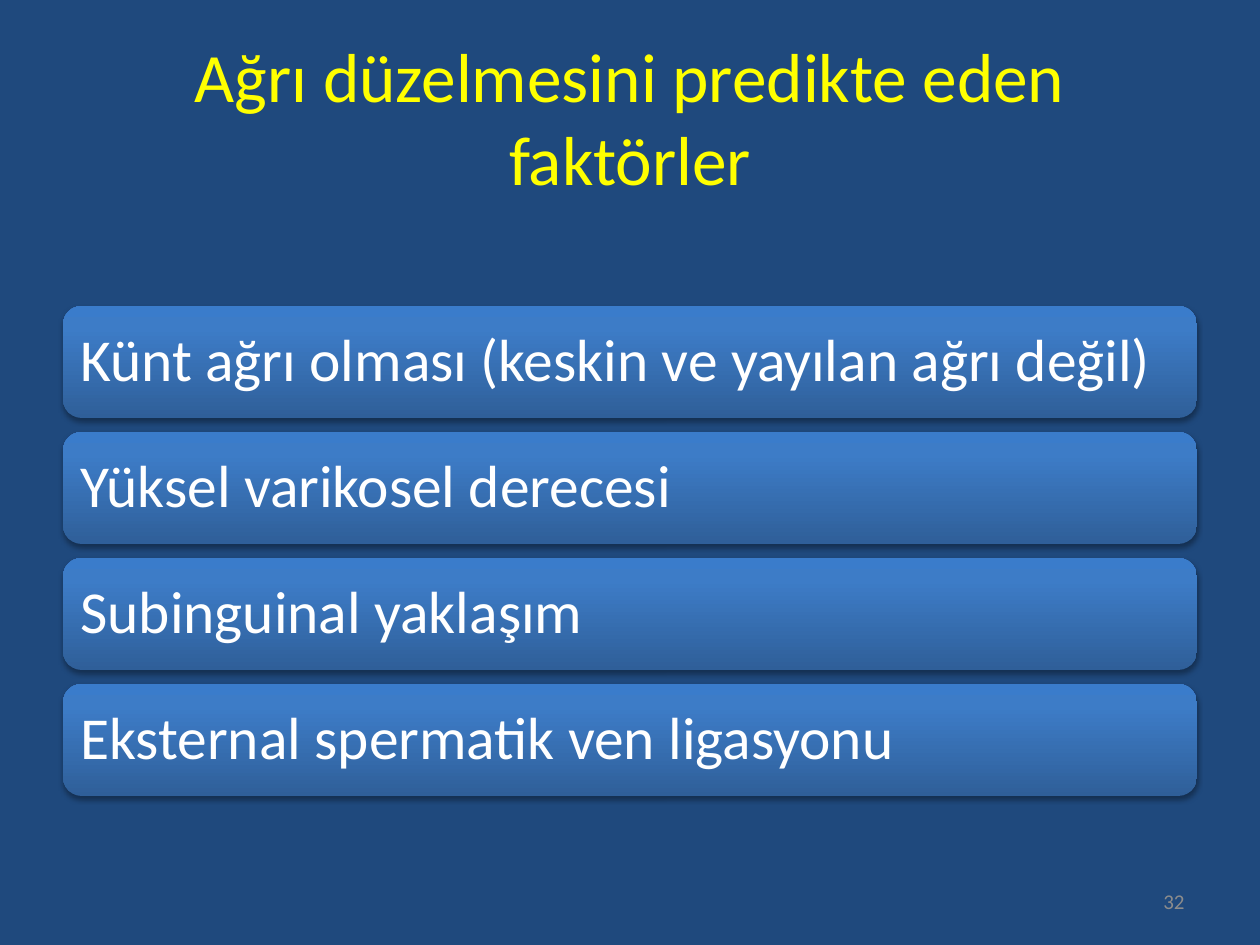
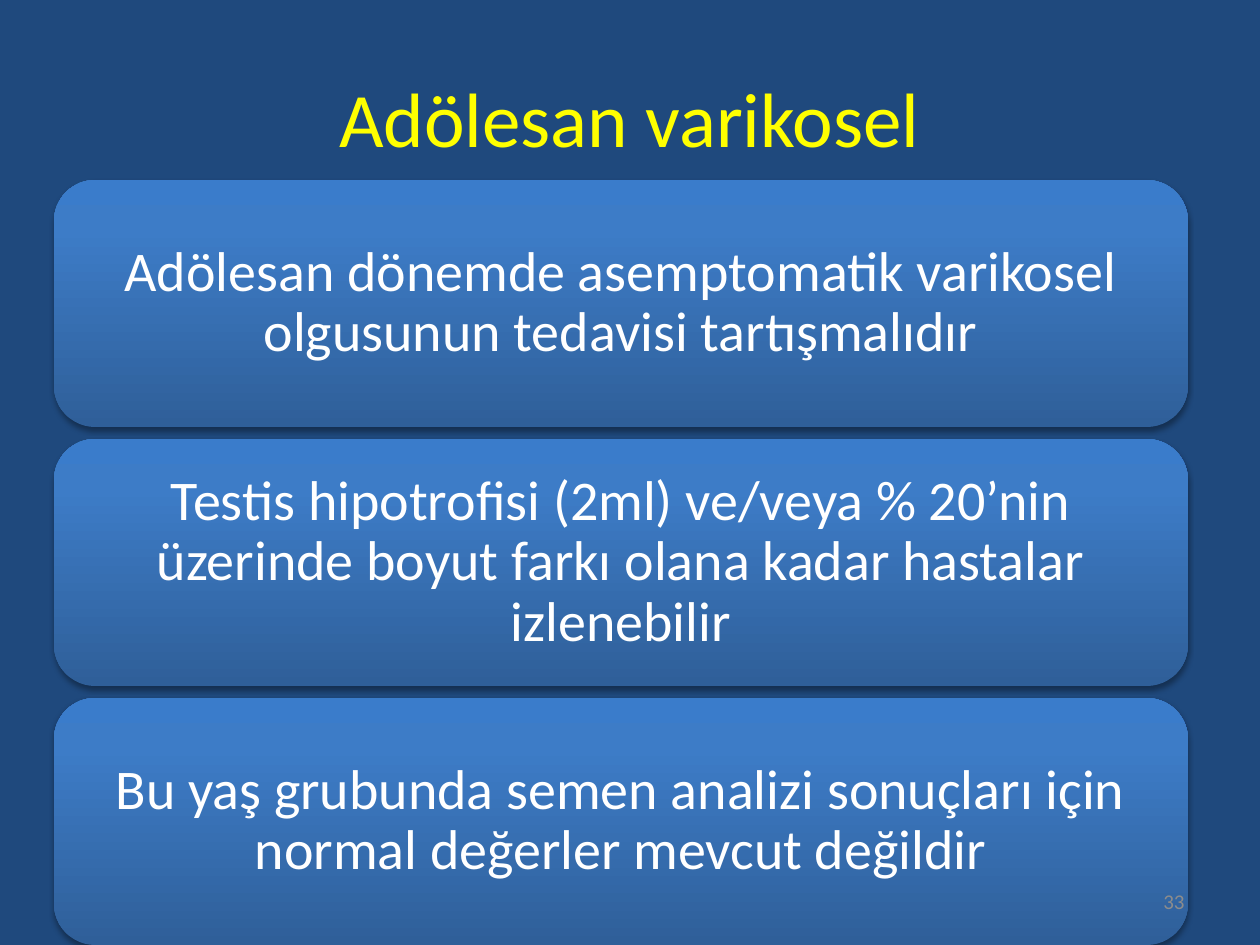
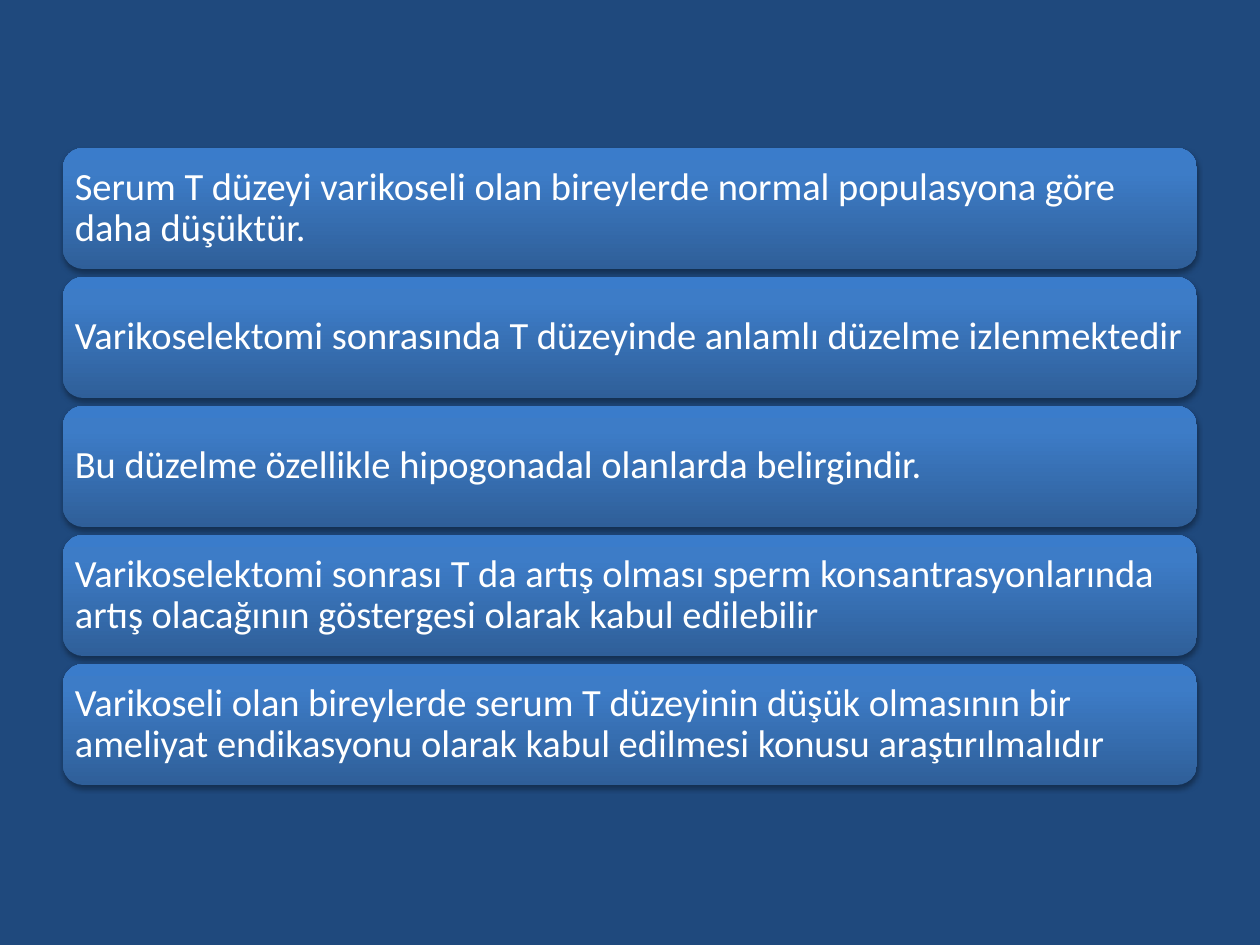
from pptx import Presentation
from pptx.dml.color import RGBColor
from pptx.enum.shapes import MSO_SHAPE
from pptx.enum.text import MSO_ANCHOR, MSO_AUTO_SIZE, PP_ALIGN
from pptx.oxml import parse_xml
from pptx.oxml.ns import nsdecls
from pptx.util import Pt

SCALE = 914400 / 126
FONT = "Calibri"
COLORS = {
    "background": "1F497D",
    "title": "FFFF00",
    "text": "FFFFFF",
    "number": "8C8C8C",
    "shadow": "000000",
}
GRADIENT = {0: "2F5F99", 80: "3D7CC7", 100: "3A7CCB"}
STOPS = "".join(
    f'<a:gs pos="{position * 1000}"><a:srgbClr val="{color}"/></a:gs>'
    for position, color in GRADIENT.items()
)
GRADIENT_XML = (
    f'<a:gradFill {nsdecls("a")} rotWithShape="1"><a:gsLst>{STOPS}</a:gsLst>'
    '<a:lin ang="16200000" scaled="0"/></a:gradFill>'
)
SHADOW_XML = (
    f'<a:effectLst {nsdecls("a")}>'
    '<a:outerShdw blurRad="40000" dist="23000" dir="5400000" rotWithShape="0">'
    f'<a:srgbClr val="{COLORS["shadow"]}"><a:alpha val="35000"/></a:srgbClr>'
    '</a:outerShdw></a:effectLst>'
)

SLIDES = [
    {
        "title": "Ağrı düzelmesini predikte eden faktörler",
        "title_size": 39.6,
        "number": "32",
        "left": 63, "top": 306, "height": 112, "pitch": 126, "margin": 12,
        "size": 34, "align": PP_ALIGN.LEFT,
        "cards": [
            "Künt ağrı olması (keskin ve yayılan ağrı değil)",
            "Yüksel varikosel derecesi",
            "Subinguinal yaklaşım",
            "Eksternal spermatik ven ligasyonu",
        ],
    },
    {
        "title": "Adölesan varikosel",
        "title_size": 44,
        "number": "33",
        "left": 54, "top": 180, "height": 247, "pitch": 259, "margin": 5,
        "size": 32, "align": PP_ALIGN.CENTER,
        "cards": [
            "Adölesan dönemde asemptomatik varikosel olgusunun tedavisi tartışmalıdır",
            "Testis hipotrofisi (2ml) ve/veya % 20’nin üzerinde boyut farkı olana kadar hastalar izlenebilir",
            "Bu yaş grubunda semen analizi sonuçları için normal değerler mevcut değildir",
        ],
    },
    {
        "title": None,
        "number": None,
        "left": 63, "top": 148, "height": 121, "pitch": 129, "margin": 6,
        "size": 22, "align": PP_ALIGN.LEFT,
        "cards": [
            "Serum T düzeyi varikoseli olan bireylerde normal populasyona göre daha düşüktür.",
            "Varikoselektomi sonrasında T düzeyinde anlamlı düzelme izlenmektedir",
            "Bu düzelme özellikle hipogonadal olanlarda belirgindir.",
            "Varikoselektomi sonrası T da artış olması sperm konsantrasyonlarında artış olacağının göstergesi olarak kabul edilebilir",
            "Varikoseli olan bireylerde serum T düzeyinin düşük olmasının bir ameliyat endikasyonu olarak kabul edilmesi konusu araştırılmalıdır",
        ],
    },
]


def px(*lengths):
    return [round(length * SCALE) for length in lengths]


def write(shape, text, size, color, align):
    text_frame = shape.text_frame
    text_frame.text = text
    text_frame.word_wrap = True
    text_frame.auto_size = MSO_AUTO_SIZE.NONE
    text_frame.vertical_anchor = MSO_ANCHOR.MIDDLE
    paragraph = text_frame.paragraphs[0]
    paragraph.alignment = align
    font = paragraph.runs[0].font
    font.name = FONT
    font.size = Pt(size)
    font.color.rgb = RGBColor.from_string(COLORS[color])
    return text_frame


presentation = Presentation()
presentation.slide_width, presentation.slide_height = px(1260, 945)
background = presentation.slide_master.background.fill
background.solid()
background.fore_color.rgb = RGBColor.from_string(COLORS["background"])
title_only, blank = presentation.slide_layouts[5], presentation.slide_layouts[6]

for content in SLIDES:
    slide = presentation.slides.add_slide(title_only if content["title"] else blank)
    if content["title"]:
        title = slide.shapes.title
        title.left, title.top, title.width, title.height = px(63, 38, 1134, 157)
        write(title, content["title"], content["title_size"], "title", PP_ALIGN.CENTER)

    for index, text in enumerate(content["cards"]):
        top = content["top"] + index * content["pitch"]
        card = slide.shapes.add_shape(
            MSO_SHAPE.ROUNDED_RECTANGLE, *px(content["left"], top, 1134, content["height"])
        )
        card.line.fill.background()
        properties = card._element.spPr
        properties.insert(2, parse_xml(GRADIENT_XML))
        properties.append(parse_xml(SHADOW_XML))
        text_frame = write(card, text, content["size"], "text", content["align"])
        text_frame.paragraphs[0].line_spacing = 0.9
        margin = px(content["margin"])[0]
        text_frame.margin_left = text_frame.margin_right = margin
        text_frame.margin_top = text_frame.margin_bottom = margin

    if content["number"]:
        number = slide.shapes.add_textbox(*px(903, 876, 294, 50))
        write(number, content["number"], 12, "number", PP_ALIGN.RIGHT)

presentation.save("out.pptx")
